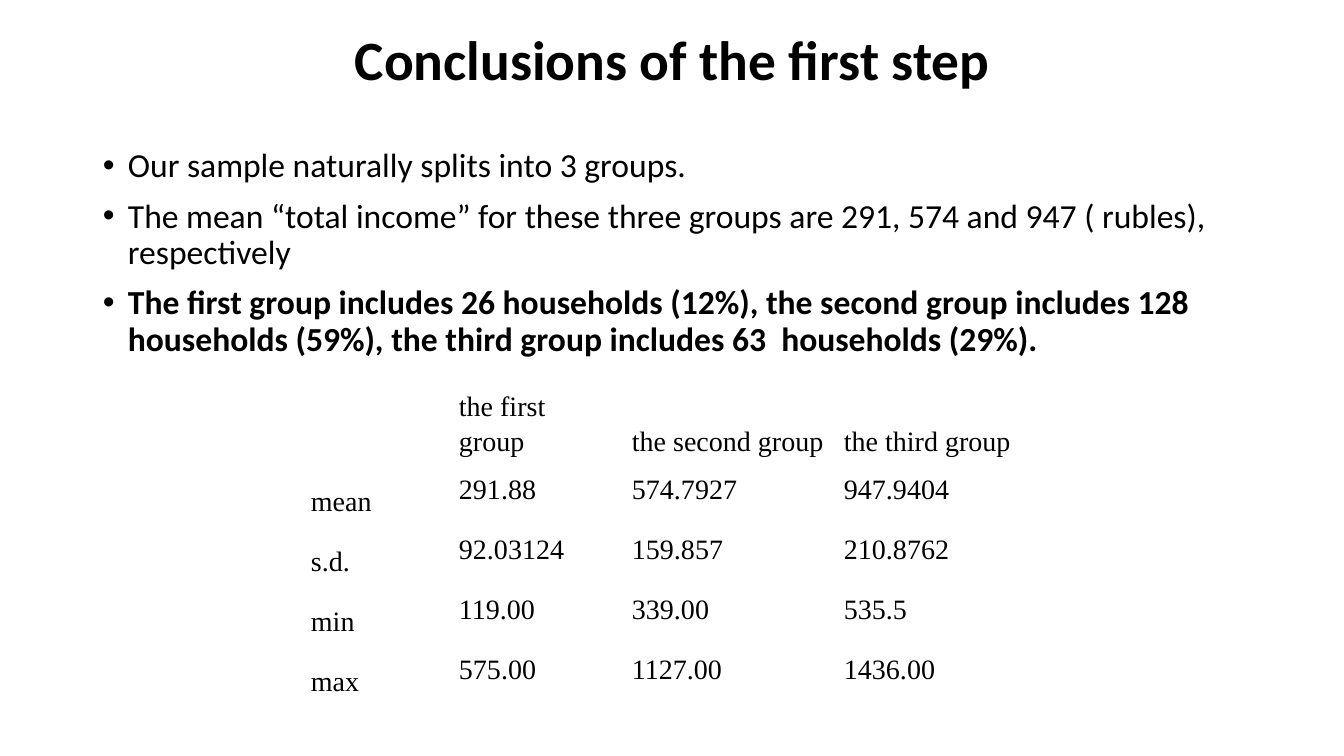
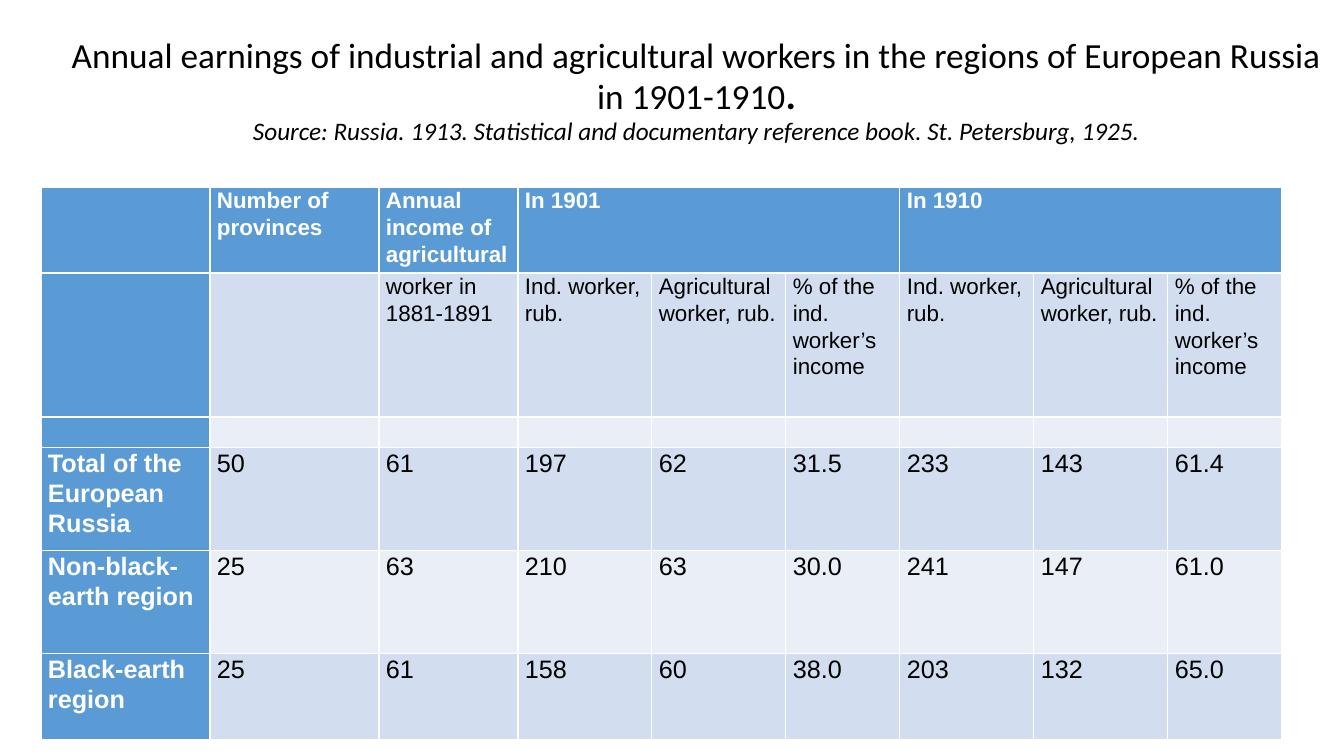
"""Build two slides on household income groups and workers' annual earnings."""
from lxml import etree
from pptx import Presentation, util as u
from pptx.dml.color import RGBColor
from pptx.enum import text
from pptx.oxml import ns

PX = 914400 / 100.8
WHITE, BLACK = "FFFFFF", "000000"
HEADER, BAND, LIGHT_BAND = "5B9BD5", "D2DEEF", "EAEFF7"
TITLE = {"alignment": text.PP_ALIGN.CENTER, "line_spacing": 0.9}


def px(length):
    """Turn px into EMU."""
    return u.Emu(round(length * PX))


def write(paragraph, content, layout, size, name="Calibri", color=BLACK, **font):
    """Append one formatted run and set the paragraph layout."""
    for attribute, value in layout.items():
        setattr(paragraph, attribute, value)
    run = paragraph.add_run()
    run.text = content
    values = {"size": u.Pt(size), "name": name, "bold": False, **font}
    for attribute, value in values.items():
        setattr(run.font, attribute, value)
    run.font.color.rgb = RGBColor.from_string(color)


presentation = Presentation()
presentation.slide_width, presentation.slide_height = px(1344), px(756)
title_only = presentation.slide_layouts[5]

slides = []
for box, anchor, lines in [
    ((93, 10, 1159, 106), text.MSO_ANCHOR.MIDDLE, [
        [("Conclusions of the first step", 39.6, {"bold": True})],
    ]),
    ((50, 33, 1293, 174), text.MSO_ANCHOR.TOP, [
        [("Annual earnings of industrial and agricultural workers in the regions "
          "of European Russia in 1901-1910", 25.2, {}),
         (".", 27.9, {"bold": True})],
        [("Source: Russia. 1913. Statistical and documentary reference book. "
          "St. Petersburg, 1925.", 18, {"italic": True})],
    ]),
]:
    slide = presentation.slides.add_slide(title_only)
    title = slide.shapes.title
    title.left, title.top, title.width, title.height = map(px, box)
    frame = title.text_frame
    frame.auto_size = text.MSO_AUTO_SIZE.NONE
    frame.vertical_anchor = anchor
    for index, line in enumerate(lines):
        paragraph = frame.add_paragraph() if index else frame.paragraphs[0]
        for content, size, font in line:
            write(paragraph, content, TITLE, size, **font)
    slides.append(slide)

conclusions = slides[0].shapes.add_textbox(px(93), px(144), px(1159), px(220))
frame = conclusions.text_frame
frame.word_wrap = True
for index, (content, bold) in enumerate([
    ("Our sample naturally splits into 3 groups.", False),
    ("The mean “total income” for these three groups are 291, 574 and 947 "
     "( rubles), respectively", False),
    ("The first group includes 26 households (12%), the second group includes 128 "
     "households (59%), the third group includes 63  households (29%).", True),
]):
    paragraph = frame.add_paragraph() if index else frame.paragraphs[0]
    write(paragraph, content, {"line_spacing": 0.9, "space_before": u.Pt(10)}, 24, bold=bold)
    properties = paragraph._p.get_or_add_pPr()
    properties.set("marL", str(px(25)))
    properties.set("indent", str(-px(25)))
    etree.SubElement(properties, ns.qn("a:buFont")).set("typeface", "Arial")
    etree.SubElement(properties, ns.qn("a:buChar")).set("char", "•")

group_rows = [
    ["", "the first\vgroup", "the second group", "the third group"],
    ["mean", "291.88", "574.7927", "947.9404"],
    ["s.d.", "92.03124", "159.857", "210.8762"],
    ["min", "119.00", "339.00", "535.5"],
    ["max", "575.00", "1127.00", "1436.00"],
]
year_columns = ["Ind. worker, rub.", "Agricultural worker, rub.", "% of the ind. worker’s income"]
earnings_rows = [
    ["", "Number of provinces", "Annual income of agricultural",
     "In 1901", "", "", "In 1910", "", ""],
    ["", "", "worker in 1881-1891", *year_columns * 2],
    [""] * 9,
    ["Total of the European Russia", "50", "61", "197", "62", "31.5", "233", "143", "61.4"],
    ["Non-black-earth region", "25", "63", "210", "63", "30.0", "241", "147", "61.0"],
    ["Black-earth region", "25", "61", "158", "60", "38.0", "203", "132", "65.0"],
]
tables = []
for slide, left, top, widths, heights, rows in [
    (slides[0], 304, 371, [148, 173, 212, 203], [87] + [60] * 4, group_rows),
    (slides[1], 41, 187, [169, 169, 139] + [134, 134, 114] * 2,
     [86, 144, 29, 103, 103, 86], earnings_rows),
]:
    table = slide.shapes.add_table(len(rows), len(widths), px(left), px(top),
                                   px(sum(widths)), px(sum(heights))).table
    for column, width in zip(table.columns, widths):
        column.width = px(width)
    for row, height in zip(table.rows, heights):
        row.height = px(height)
    for cell in table.iter_cells():
        cell.margin_left = cell.margin_right = px(7)
        cell.margin_top = cell.margin_bottom = 0
        cell.fill.solid()
    tables.append(table)
groups, earnings = tables

for row, values in enumerate(group_rows):
    for column, value in enumerate(values):
        cell = groups.cell(row, column)
        cell.fill.fore_color.rgb = RGBColor.from_string(WHITE)
        edge = row == 0 or column == 0
        cell.vertical_anchor = text.MSO_ANCHOR.BOTTOM if edge else text.MSO_ANCHOR.MIDDLE
        if value:
            paragraph = cell.text_frame.paragraphs[0]
            for index, part in enumerate(value.split("\v")):
                if index:
                    paragraph.add_line_break()
                write(paragraph, part, {"line_spacing": 1.15}, 20, "Times New Roman")

for row, values in enumerate(earnings_rows):
    for column, value in enumerate(values):
        cell = earnings.cell(row, column)
        heading = row == 0 or column == 0
        fill = HEADER if heading else BAND if row % 2 else LIGHT_BAND
        cell.fill.fore_color.rgb = RGBColor.from_string(fill)
        if value:
            spaced = row == 0 or (row > 2 and column > 0)
            layout = {"line_spacing": 1.07, "space_before": u.Pt(3 if spaced else 0)}
            write(cell.text_frame.paragraphs[0], value, layout, 16 if row < 2 else 18,
                  "Arial", WHITE if heading else BLACK, bold=heading)
for first in (3, 6):
    earnings.cell(0, first).merge(earnings.cell(0, first + 2))

presentation.save("out.pptx")
